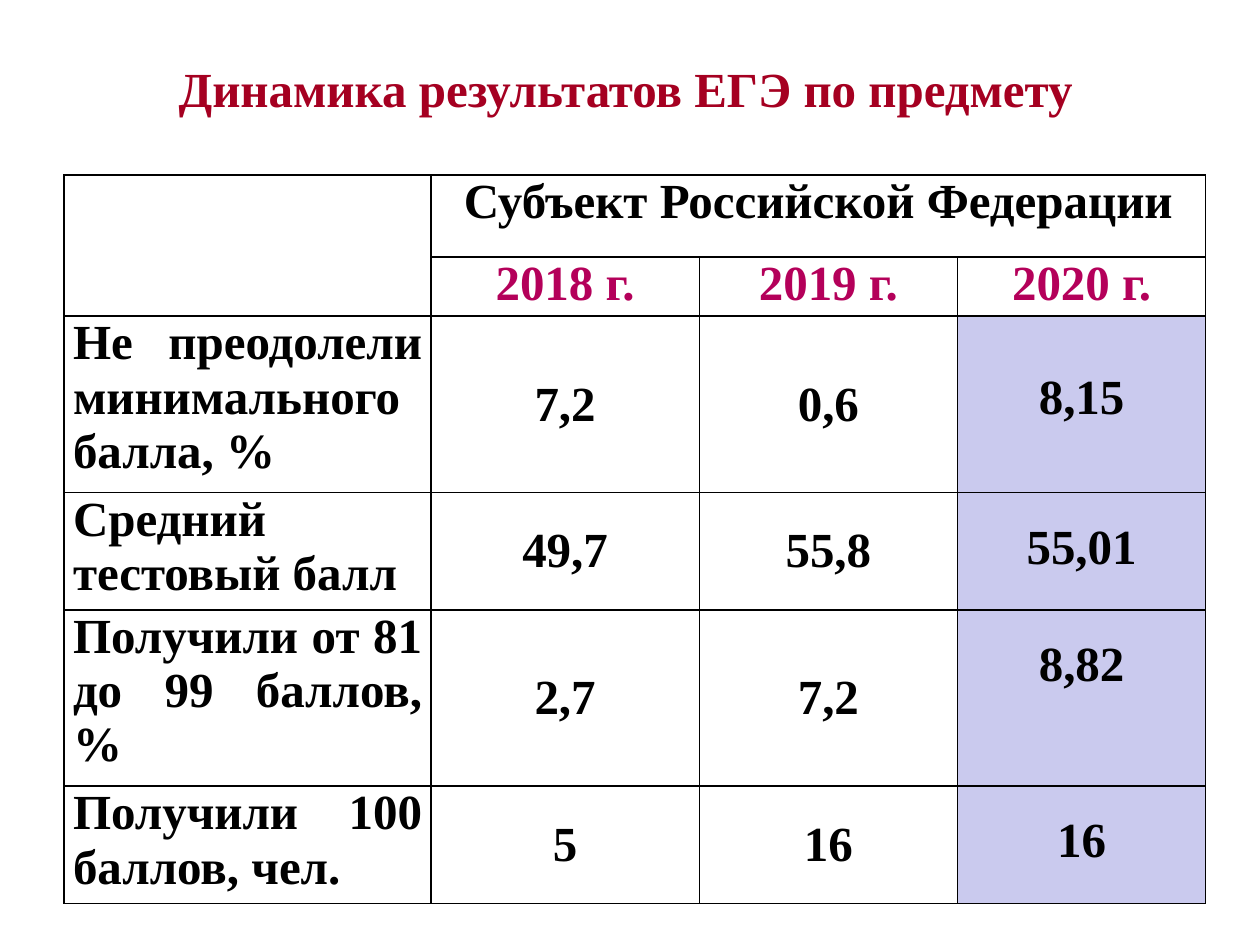
from lxml.etree import SubElement
from pptx import Presentation
from pptx.dml.color import RGBColor
from pptx.enum.text import MSO_ANCHOR, MSO_AUTO_SIZE, PP_ALIGN
from pptx.oxml.ns import qn
from pptx.util import Inches, Pt

TITLE = "Динамика результатов ЕГЭ по предмету"
REGION = "Субъект Российской Федерации"
YEARS = ["2018 г.", "2019 г.", "2020 г."]
RESULTS = [
    ("Не преодолели минимального балла, %", "7,2", "0,6", "8,15"),
    ("Средний тестовый балл", "49,7", "55,8", "55,01"),
    ("Получили от 81 до 99 баллов, %", "2,7", "7,2", "8,82"),
    ("Получили 100 баллов, чел.", "5", "16", "16"),
]
LATEST_OFFSETS = [0.43, 0.22, 0.22, 0.22]
COLUMN_WIDTHS = [2.91, 2.13, 2.05, 1.97]
ROW_HEIGHTS = [0.65, 0.47, 1.4, 0.93, 1.4, 0.93]
CRIMSON, MAGENTA, BLACK, WHITE, LILAC = "A50021", "B4005A", "000000", "FFFFFF", "CACAEE"


def paint(color_format, color):
    color_format.rgb = RGBColor.from_string(color)


def write(frame, text, color, align=PP_ALIGN.CENTER):
    frame.text = text
    paragraph = frame.paragraphs[0]
    paragraph.alignment = align
    font = paragraph.runs[0].font
    font.name, font.size, font.bold = "Times New Roman", Pt(28), True
    paint(font.color, color)


def style_cell(cell, fill):
    properties = cell._tc.get_or_add_tcPr()
    for side in ("a:lnL", "a:lnR", "a:lnT", "a:lnB"):
        border = SubElement(properties, qn(side), w=str(Pt(1)))
        solid = SubElement(border, qn("a:solidFill"))
        SubElement(solid, qn("a:srgbClr"), val=BLACK)
    cell.fill.solid()
    paint(cell.fill.fore_color, fill)
    cell.margin_left = cell.margin_right = Inches(0.07)
    cell.margin_top = cell.margin_bottom = 0


def add_title(slide):
    title = slide.shapes.title
    title.left, title.top = Inches(0.2), Inches(0.41)
    title.width, title.height = Inches(9.53), Inches(0.57)
    title.text_frame.auto_size = MSO_AUTO_SIZE.NONE
    title.text_frame.vertical_anchor = MSO_ANCHOR.MIDDLE
    write(title.text_frame, TITLE, CRIMSON)


def add_results(slide):
    table = slide.shapes.add_table(
        len(ROW_HEIGHTS), len(COLUMN_WIDTHS), Inches(0.51), Inches(1.39),
        Inches(sum(COLUMN_WIDTHS)), Inches(sum(ROW_HEIGHTS))).table
    table.first_row = table.horz_banding = False
    for column, width in zip(table.columns, COLUMN_WIDTHS):
        column.width = Inches(width)
    for row, height in zip(table.rows, ROW_HEIGHTS):
        row.height = Inches(height)
    latest = len(YEARS)
    for r in range(len(ROW_HEIGHTS)):
        for c in range(len(COLUMN_WIDTHS)):
            style_cell(table.cell(r, c), LILAC if r > 1 and c == latest else WHITE)

    table.cell(0, 0).merge(table.cell(1, 0))
    table.cell(0, 1).merge(table.cell(0, latest))
    write(table.cell(0, 1).text_frame, REGION, BLACK)
    for c, year in enumerate(YEARS, 1):
        write(table.cell(1, c).text_frame, year, MAGENTA)
    for r, (result, offset) in enumerate(zip(RESULTS, LATEST_OFFSETS), 2):
        for c, text in enumerate(result):
            cell = table.cell(r, c)
            write(cell.text_frame, text, BLACK, PP_ALIGN.CENTER if c else PP_ALIGN.JUSTIFY)
            if 0 < c < latest:
                cell.vertical_anchor = MSO_ANCHOR.MIDDLE
        table.cell(r, latest).margin_top = Inches(offset)


def main():
    deck = Presentation()
    deck.slide_width, deck.slide_height = Inches(10), Inches(7.5)
    slide = deck.slides.add_slide(deck.slide_layouts[5])
    add_title(slide)
    add_results(slide)
    deck.save("out.pptx")


if __name__ == "__main__":
    main()
